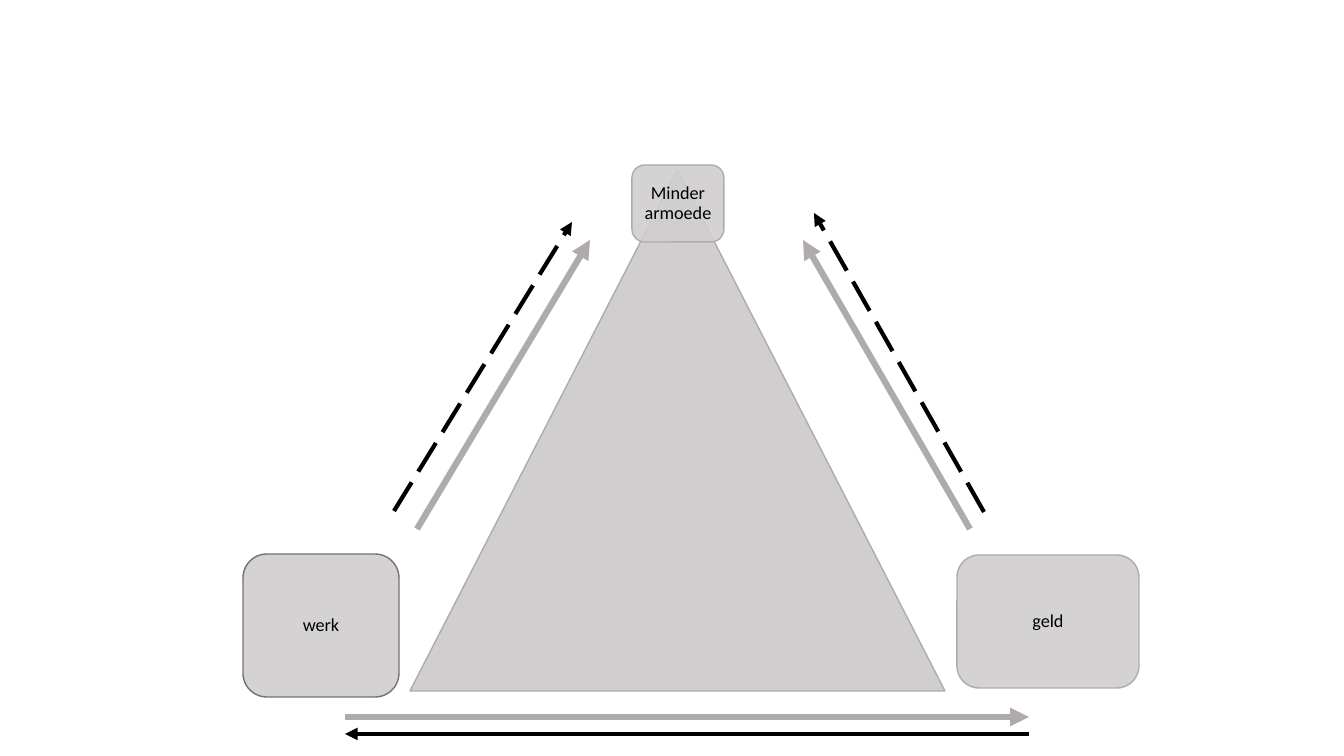
"""Build a slide with a triangle linking work, money and less poverty."""
from lxml import etree
from pptx import Presentation
from pptx import util as u
from pptx.dml.color import RGBColor
from pptx.enum import dml, shapes, text
from pptx.oxml.ns import qn

PX_PER_INCH = 100.8
LIGHT_GREY = RGBColor(0xD0, 0xCE, 0xCE)
MID_GREY = RGBColor(0xAF, 0xAB, 0xAB)
DARK_GREY = RGBColor(0x76, 0x71, 0x71)
BLACK = RGBColor(0, 0, 0)

CORNERS = [
    ("Minder armoede", (632, 165, 92, 77), MID_GREY),
    ("werk", (243, 554, 156, 143), DARK_GREY),
    ("geld", (957, 555, 182, 133), MID_GREY),
]
GREY_ARROWS = [
    (970, 529, 803, 240),
    (345, 717, 1029, 717),
    (417, 529, 590, 240),
]
DASHED_ARROWS = [(394, 511, 572, 222), (984, 512, 814, 213)]
RETURN_ARROW = (1029, 734, 345, 734)


def px(length):
    """Turn a length in px into EMU."""
    return u.Inches(length / PX_PER_INCH)


def add_outlined(slide, kind, box, outline):
    """Add a light grey shape with a thin outline."""
    shape = slide.shapes.add_shape(kind, *map(px, box))
    shape.shadow.inherit = False
    shape.fill.solid()
    shape.fill.fore_color.rgb = LIGHT_GREY
    shape.line.color.rgb = outline
    shape.line.width = u.Pt(1)
    return shape


def add_corner(slide, label, box, outline):
    """Add a slightly transparent rounded box with its label."""
    corner = add_outlined(slide, shapes.MSO_SHAPE.ROUNDED_RECTANGLE, box, outline)
    fill_color = corner.fill._xPr.find(qn("a:solidFill"))[0]
    etree.SubElement(fill_color, qn("a:alpha"), val="90000")
    frame = corner.text_frame
    frame.word_wrap = True
    frame.vertical_anchor = text.MSO_ANCHOR.MIDDLE
    frame.margin_left = frame.margin_right = px(5)
    frame.margin_top = frame.margin_bottom = px(5)
    paragraph = frame.paragraphs[0]
    paragraph.text = label
    paragraph.alignment = text.PP_ALIGN.CENTER
    paragraph.line_spacing = 0.9
    paragraph.font.name = "Calibri"
    paragraph.font.size = u.Pt(13)
    paragraph.font.color.rgb = BLACK


def add_arrow(slide, ends, color, width, dash=None):
    """Add a straight arrow with a triangular head at its end."""
    arrow = slide.shapes.add_connector(shapes.MSO_CONNECTOR.STRAIGHT, *map(px, ends))
    arrow.line.color.rgb = color
    arrow.line.width = u.Pt(width)
    if dash:
        arrow.line.dash_style = dash
    properties = arrow._element.spPr
    etree.SubElement(properties.find(qn("a:ln")), qn("a:tailEnd"), type="triangle")
    etree.SubElement(properties, qn("a:effectLst"))


def main():
    """Build and save the slide."""
    deck = Presentation()
    deck.slide_width, deck.slide_height = px(1344), px(756)
    slide = deck.slides.add_slide(deck.slide_layouts[6])
    add_outlined(slide, shapes.MSO_SHAPE.ISOSCELES_TRIANGLE, (410, 170, 535, 521), MID_GREY)
    for label, box, outline in CORNERS:
        add_corner(slide, label, box, outline)
    for ends in GREY_ARROWS:
        add_arrow(slide, ends, MID_GREY, 4.5)
    for ends in DASHED_ARROWS:
        add_arrow(slide, ends, BLACK, 3, dml.MSO_LINE.LONG_DASH)
    add_arrow(slide, RETURN_ARROW, BLACK, 3)
    deck.save("out.pptx")


if __name__ == "__main__":
    main()
